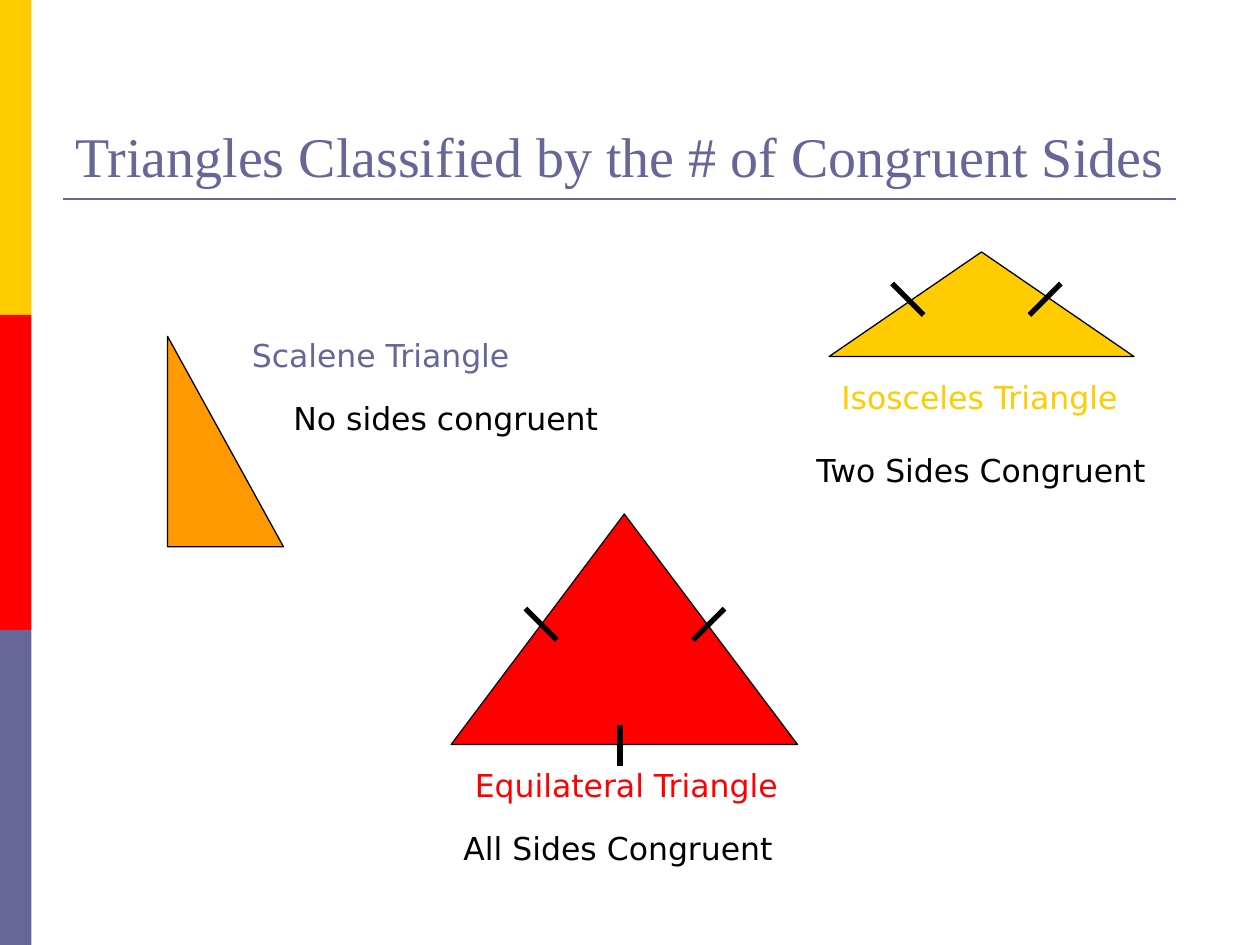
import pptx
import pptx.util
import pptx.dml.color
import pptx.enum.shapes
import pptx.enum.text
import pptx.oxml

Inches = pptx.util.Inches
Shapes = pptx.enum.shapes.MSO_SHAPE
Anchor = pptx.enum.text.MSO_ANCHOR

COLORS = {
    "yellow": "FFCC00",
    "red": "FF0000",
    "slate": "666699",
    "orange": "FF9900",
    "black": "000000",
}
BODY_FONT = "DejaVu Sans"
TITLE_FONT = "Times New Roman"

TITLE = "Triangles Classified by the # of Congruent Sides"
BAND_COLORS = ["yellow", "red", "slate"]
BAND_WIDTH, BAND_HEIGHT = 0.25, 2.5
LABEL_HEIGHT = 0.4

TRIANGLES = [
    {
        "outline": (Shapes.RIGHT_TRIANGLE, (1.33, 2.67, 0.92, 1.67), "orange"),
        "labels": [
            ("Scalene Triangle", 1.9, 2.62, 2.28, "slate"),
            ("No sides congruent", 2.23, 3.12, 2.62, "black"),
        ],
        "ticks": [],
    },
    {
        "outline": (Shapes.ISOSCELES_TRIANGLE, (6.58, 2, 2.42, 0.83), "yellow"),
        "labels": [
            ("Isosceles Triangle", 6.58, 2.95, 2.45, "yellow"),
            ("Two Sides Congruent", 6.38, 3.53, 2.88, "black"),
        ],
        "ticks": [(7.08, 2.25, 7.33, 2.5), (8.42, 2.25, 8.17, 2.5)],
    },
    {
        "outline": (Shapes.ISOSCELES_TRIANGLE, (3.58, 4.08, 2.75, 1.83), "red"),
        "labels": [
            ("Equilateral Triangle", 3.67, 6.03, 2.64, "red"),
            ("All Sides Congruent", 3.58, 6.53, 2.67, "black"),
        ],
        "ticks": [
            (4.17, 4.83, 4.42, 5.08),
            (5.75, 4.83, 5.5, 5.08),
            (4.92, 5.75, 4.92, 6.08),
        ],
    },
]


def color(name):
    return pptx.dml.color.RGBColor.from_string(COLORS[name])


def add_filled_shape(slide, kind, box, fill, outlined):
    shape = slide.shapes.add_shape(kind, *map(Inches, box))
    shape.shadow.inherit = False
    shape.fill.solid()
    shape.fill.fore_color.rgb = color(fill)
    if outlined:
        shape.line.color.rgb = color("black")
        shape.line.width = pptx.util.Pt(0.75)
    else:
        shape.line.fill.background()


def add_line(slide, ends, line_color, width):
    connector = slide.shapes.add_connector(
        pptx.enum.shapes.MSO_CONNECTOR.STRAIGHT, *map(Inches, ends)
    )
    connector.line.color.rgb = color(line_color)
    connector.line.width = pptx.util.Pt(width)
    properties = connector._element.spPr
    properties.append(pptx.oxml.parse_xml(
        '<a:effectLst xmlns:a="http://schemas.openxmlformats.org/drawingml/2006/main"/>'
    ))


def add_text(slide, text, box, font, size, text_color, wrap=False, anchor=Anchor.TOP):
    frame = slide.shapes.add_textbox(*map(Inches, box)).text_frame
    frame.word_wrap = wrap
    frame.vertical_anchor = anchor
    if not wrap:
        frame.auto_size = pptx.enum.text.MSO_AUTO_SIZE.SHAPE_TO_FIT_TEXT
    paragraph = frame.paragraphs[0]
    paragraph.text = text
    paragraph.font.name = font
    paragraph.font.size = pptx.util.Pt(size)
    paragraph.font.color.rgb = color(text_color)


def main():
    presentation = pptx.Presentation()
    presentation.slide_width = Inches(10)
    presentation.slide_height = Inches(7.5)
    slide = presentation.slides.add_slide(presentation.slide_layouts[6])

    for index, band_color in enumerate(BAND_COLORS):
        box = (0, index * BAND_HEIGHT, BAND_WIDTH, BAND_HEIGHT)
        add_filled_shape(slide, Shapes.RECTANGLE, box, band_color, outlined=False)
    add_line(slide, (0.5, 1.58, 9.33, 1.58), "slate", 1.5)
    add_text(slide, TITLE, (0.5, 0.3, 9, 1.25), TITLE_FONT, 32, "slate",
             wrap=True, anchor=Anchor.BOTTOM)

    for triangle in TRIANGLES:
        kind, box, fill = triangle["outline"]
        add_filled_shape(slide, kind, box, fill, outlined=True)
        for text, left, top, width, text_color in triangle["labels"]:
            add_text(slide, text, (left, top, width, LABEL_HEIGHT),
                     BODY_FONT, 18, text_color)
        for ends in triangle["ticks"]:
            add_line(slide, ends, "black", 3)

    presentation.save("out.pptx")


if __name__ == "__main__":
    main()
